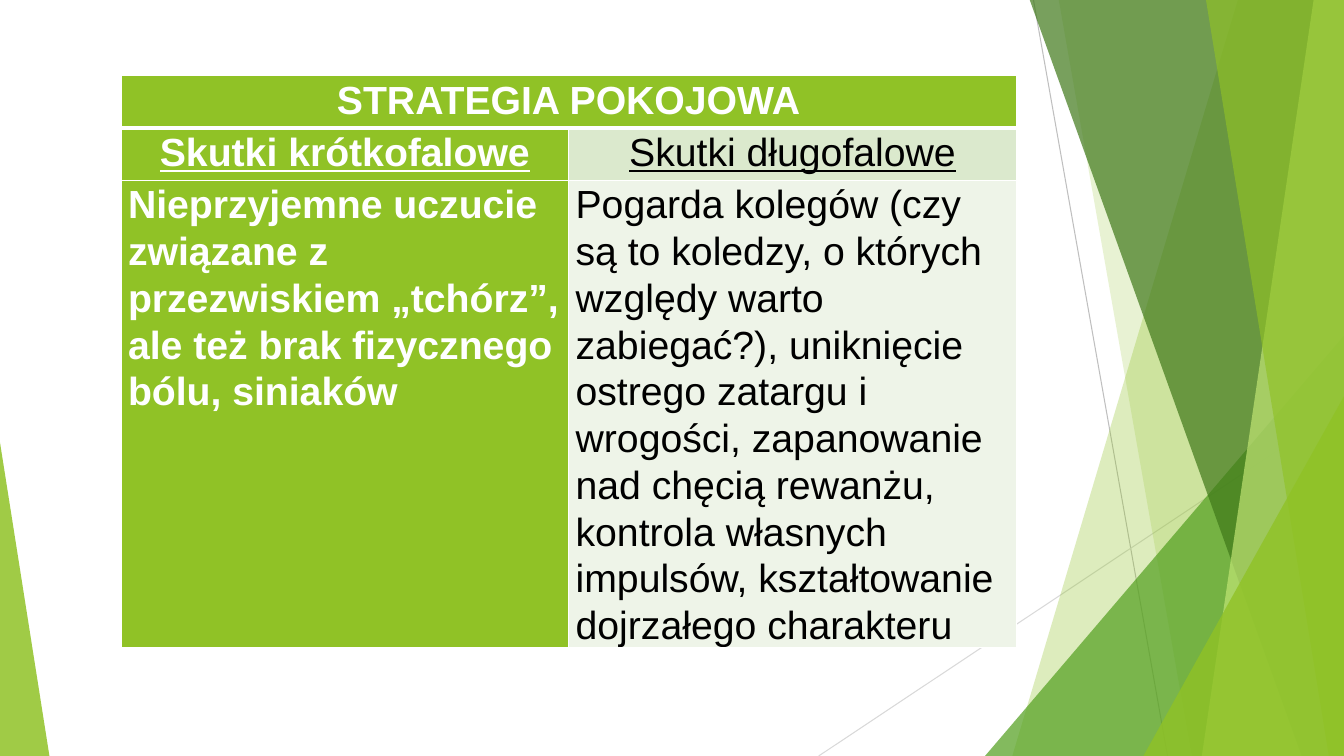
"""Build the slide with the peaceful strategy table."""
from lxml import etree
from pptx import Presentation
from pptx.dml.color import RGBColor
from pptx.enum import shapes, text
from pptx.oxml import ns
from pptx.util import Inches, Pt

COLORS = {
    "green": "90C226", "leaf": "54A021", "forest": "3F7819", "lime": "C0E474",
    "sage": "DBE9CD", "mist": "EEF4E8", "white": "FFFFFF", "black": "000000",
    "gray": "BFBFBF", "silver": "D9D9D9",
}
WIDTH, HEIGHT, TOP = 13.33, 7.5, -0.01

LINES = [
    ((10.25, 0), (11.58, HEIGHT), "gray"),
    ((WIDTH, 4.03), (8.12, HEIGHT), "silver"),
]
# (kind, geometry, colour, opacity): bands give top and bottom x, triangles give box and apex
FACETS = [
    ("band", (12.28, 10.04), "green", 30),
    ("band", (10.5, 11.82), "green", 20),
    ("triangle", (9.77, 3.33, 3.56, 1), "leaf", 72),
    ("band", (10.21, 12.91), "forest", 70),
    ("band", (13.03, 11.92), "lime", 70),
    ("band", (11.96, 13.18), "green", 65),
    ("triangle", (11.34, 3.93, 1.99, 1), "green", 80),
    ("triangle", (0, 4.39, 0.49, 0), "green", 85),
]

TITLE = "STRATEGIA POKOJOWA"
HEADINGS = ("Skutki krótkofalowe", "Skutki długofalowe")
EFFECTS = (
    "Nieprzyjemne uczucie związane z przezwiskiem „tchórz”, ale też brak "
    "fizycznego bólu, siniaków",
    "Pogarda kolegów (czy są to koledzy, o których względy warto zabiegać?), "
    "uniknięcie ostrego zatargu i wrogości, zapanowanie nad chęcią rewanżu, "
    "kontrola własnych impulsów, kształtowanie dojrzałego charakteru",
)
ROWS = [(TITLE, ""), HEADINGS, EFFECTS]
FILLS = [("green", "green"), ("green", "sage"), ("green", "mist")]
ROW_HEIGHTS = (0.52, 0.52, 3.24)
COLUMN_WIDTH = 4.44


def color(name):
    return RGBColor.from_string(COLORS[name])


def add_line(slide, start, end, name):
    line = slide.shapes.add_connector(
        shapes.MSO_CONNECTOR.STRAIGHT, *map(Inches, start + end))
    line.line.color.rgb = color(name)
    line.line.width = Pt(0.75)
    etree.SubElement(line._element.spPr, ns.qn("a:effectLst"))


def add_facet(slide, kind, geometry, name, opacity):
    if kind == "band":
        top_x, bottom_x = geometry
        corners = [(WIDTH, TOP), (WIDTH, HEIGHT), (bottom_x, HEIGHT)]
        builder = slide.shapes.build_freeform(Inches(top_x), Inches(TOP))
        builder.add_line_segments([(Inches(x), Inches(y)) for x, y in corners])
        facet = builder.convert_to_shape()
    else:
        left, top, width, apex = geometry
        facet = slide.shapes.add_shape(
            shapes.MSO_SHAPE.ISOSCELES_TRIANGLE,
            *map(Inches, (left, top, width, HEIGHT - top)))
        facet.adjustments[0] = apex
    facet.shadow.inherit = False
    facet.line.fill.background()
    facet.fill.solid()
    facet.fill.fore_color.rgb = color(name)
    fill_color = facet._element.spPr.find(ns.qn("a:solidFill"))[0]
    etree.SubElement(fill_color, ns.qn("a:alpha"), val=str(opacity * 1000))


def set_borders(cell, bottom_width):
    properties = cell._tc.get_or_add_tcPr()
    widths = {"lnL": 1, "lnR": 1, "lnT": 1, "lnB": bottom_width}
    for position, (side, width) in enumerate(widths.items()):
        border = etree.Element(ns.qn(f"a:{side}"), w=str(Pt(width)))
        fill = etree.SubElement(border, ns.qn("a:solidFill"))
        etree.SubElement(fill, ns.qn("a:srgbClr"), val=COLORS["white"])
        properties.insert(position, border)


def format_cell(cell, wording, row, column):
    cell.margin_left = cell.margin_right = Inches(0.07)
    cell.margin_top = cell.margin_bottom = 0
    cell.fill.solid()
    cell.fill.fore_color.rgb = color(FILLS[row][column])
    set_borders(cell, 3 if row == 0 else 1)
    paragraph = cell.text_frame.paragraphs[0]
    paragraph.text = wording
    paragraph.line_spacing = 1.07
    paragraph.alignment = text.PP_ALIGN.LEFT if row == 2 else text.PP_ALIGN.CENTER
    font = paragraph.font
    font.name, font.size = "Arial", Pt(28)
    font.bold = column == 0
    font.underline = row == 1
    font.color.rgb = color("white" if column == 0 else "black")


def add_strategy_table(slide):
    table = slide.shapes.add_table(
        len(ROWS), 2, Inches(1.2), Inches(0.75),
        Inches(2 * COLUMN_WIDTH), Inches(sum(ROW_HEIGHTS))).table
    for column in table.columns:
        column.width = Inches(COLUMN_WIDTH)
    for row, wordings in enumerate(ROWS):
        table.rows[row].height = Inches(ROW_HEIGHTS[row])
        for column, wording in enumerate(wordings):
            format_cell(table.cell(row, column), wording, row, column)
    table.cell(0, 0).merge(table.cell(0, 1))


def main():
    presentation = Presentation()
    presentation.slide_width, presentation.slide_height = Inches(WIDTH), Inches(HEIGHT)
    slide = presentation.slides.add_slide(presentation.slide_layouts[6])
    for line in LINES:
        add_line(slide, *line)
    for facet in FACETS:
        add_facet(slide, *facet)
    add_strategy_table(slide)
    presentation.save("out.pptx")


if __name__ == "__main__":
    main()
